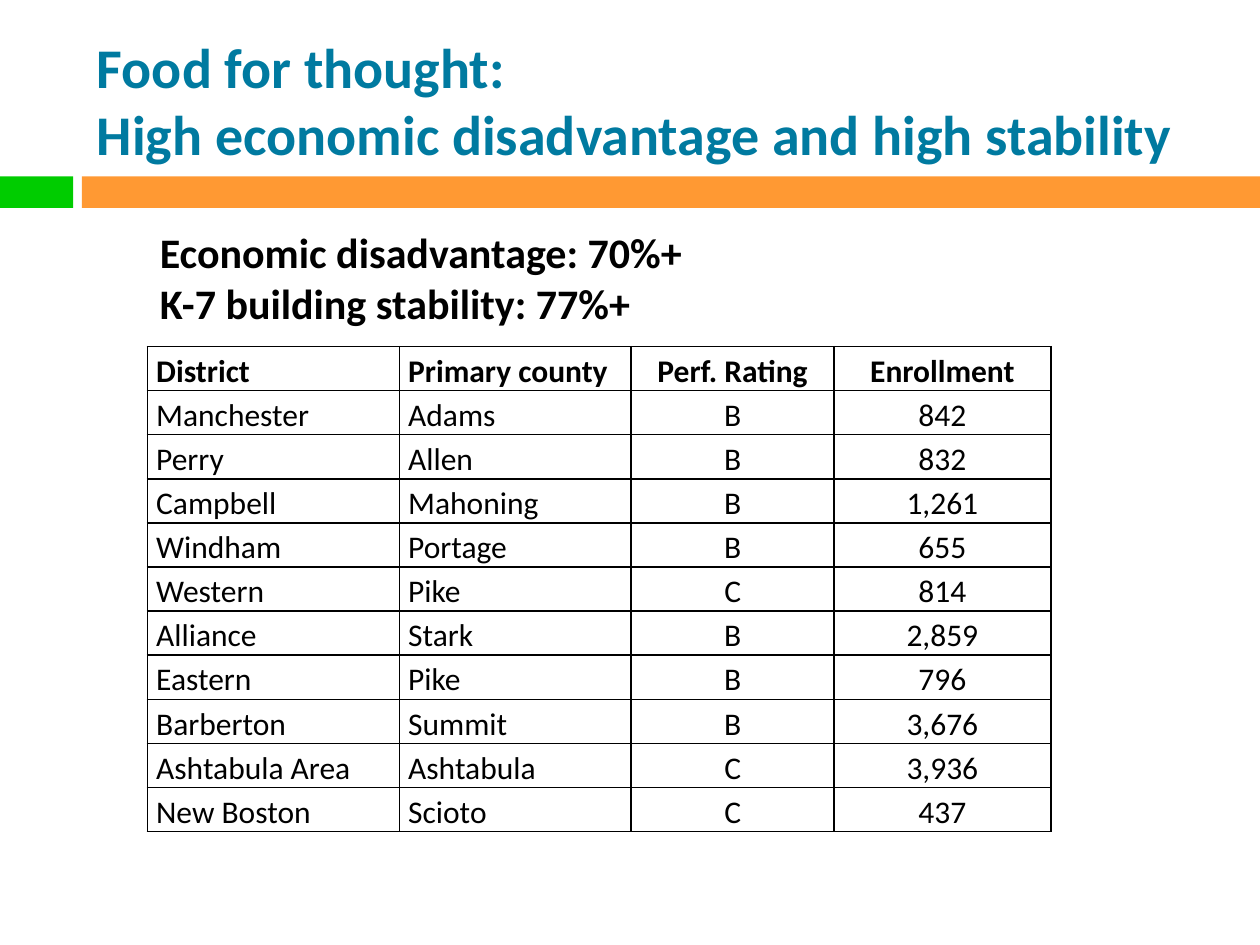
import dataclasses

import pptx
import pptx.dml.color
import pptx.enum.shapes
import pptx.enum.text
import pptx.oxml
import pptx.oxml.ns
import pptx.util

Inches = pptx.util.Inches
Pt = pptx.util.Pt
LEFT = pptx.enum.text.PP_ALIGN.LEFT
CENTER = pptx.enum.text.PP_ALIGN.CENTER
MIDDLE = pptx.enum.text.MSO_ANCHOR.MIDDLE
TOP = pptx.enum.text.MSO_ANCHOR.TOP


@dataclasses.dataclass(frozen=True)
class Theme:
    font: str = "Calibri"
    title_color: str = "007AA0"
    text_color: str = "000000"
    border_color: str = "000000"
    accent_green: str = "00CC00"
    accent_orange: str = "FF9933"
    title_size: int = 32
    criteria_size: int = 24
    table_size: int = 18


THEME = Theme()

COLUMNS = [
    ("District", 2, LEFT),
    ("Primary county", 1.84, LEFT),
    ("Perf. Rating", 1.61, CENTER),
    ("Enrollment", 1.72, CENTER),
]
DISTRICTS = [
    ("Manchester", "Adams", "B", "842"),
    ("Perry", "Allen", "B", "832"),
    ("Campbell", "Mahoning", "B", "1,261"),
    ("Windham", "Portage", "B", "655"),
    ("Western", "Pike", "C", "814"),
    ("Alliance", "Stark", "B", "2,859"),
    ("Eastern", "Pike", "B", "796"),
    ("Barberton", "Summit", "B", "3,676"),
    ("Ashtabula Area", "Ashtabula", "C", "3,936"),
    ("New Boston", "Scioto", "C", "437"),
]
ROW_HEIGHT = 0.35


def rgb(color):
    return pptx.dml.color.RGBColor.from_string(color)


def add_run(paragraph, text, size, color, bold):
    run = paragraph.add_run()
    run.text = text
    run.font.name = THEME.font
    run.font.size = Pt(size)
    run.font.color.rgb = rgb(color)
    run.font.bold = bold


def add_bar(slide, left, top, width, height, color):
    shape = slide.shapes.add_shape(
        pptx.enum.shapes.MSO_SHAPE.RECTANGLE,
        Inches(left), Inches(top), Inches(width), Inches(height),
    )
    shape.shadow.inherit = False
    shape.fill.solid()
    shape.fill.fore_color.rgb = rgb(color)
    shape.line.fill.background()


def add_heading(slide, left, top, width, height, lines, size, color, anchor):
    box = slide.shapes.add_textbox(
        Inches(left), Inches(top), Inches(width), Inches(height)
    )
    frame = box.text_frame
    frame.word_wrap = True
    frame.vertical_anchor = anchor
    paragraph = frame.paragraphs[0]
    for index, line in enumerate(lines):
        if index:
            paragraph.add_line_break()
        add_run(paragraph, line, size, color, True)


def set_borders(cell):
    properties = cell._tc.get_or_add_tcPr()
    for index, side in enumerate(("lnL", "lnR", "lnT", "lnB")):
        border = pptx.oxml.parse_xml(
            f'<a:{side} {pptx.oxml.ns.nsdecls("a")} w="{Pt(1)}"><a:solidFill>'
            f'<a:srgbClr val="{THEME.border_color}"/></a:solidFill></a:{side}>'
        )
        properties.insert(index, border)


def fill_cell(cell, text, alignment, bold):
    cell.fill.background()
    cell.margin_left = cell.margin_right = Inches(0.07)
    cell.margin_top = cell.margin_bottom = 0
    cell.vertical_anchor = MIDDLE
    paragraph = cell.text_frame.paragraphs[0]
    paragraph.alignment = alignment
    paragraph.line_spacing = 1.15
    add_run(paragraph, text, THEME.table_size, THEME.text_color, bold)
    set_borders(cell)


def add_district_table(slide, left, top):
    headers, widths, alignments = zip(*COLUMNS)
    rows = [headers, *DISTRICTS]
    table = slide.shapes.add_table(
        len(rows), len(COLUMNS), Inches(left), Inches(top),
        Inches(sum(widths)), Inches(ROW_HEIGHT * len(rows)),
    ).table
    table.first_row = False
    table.horz_banding = False
    for column, width in zip(table.columns, widths):
        column.width = Inches(width)
    for row_index, values in enumerate(rows):
        table.rows[row_index].height = Inches(ROW_HEIGHT)
        for column_index, text in enumerate(values):
            fill_cell(table.cell(row_index, column_index), text,
                      alignments[column_index], row_index == 0)


def main():
    presentation = pptx.Presentation()
    presentation.slide_width = Inches(10)
    presentation.slide_height = Inches(7.5)
    slide = presentation.slides.add_slide(presentation.slide_layouts[6])

    add_bar(slide, 0, 1.4, 0.58, 0.25, THEME.accent_green)
    add_bar(slide, 0.65, 1.4, 9.35, 0.25, THEME.accent_orange)
    add_heading(
        slide, 0.67, 0.25, 9.08, 1.08,
        ["Food for thought:", "High economic disadvantage and high stability"],
        THEME.title_size, THEME.title_color, MIDDLE,
    )
    add_district_table(slide, 1.17, 2.75)
    add_heading(
        slide, 1.17, 1.75, 4.5, 0.91,
        ["Economic disadvantage: 70%+", "K-7 building stability: 77%+"],
        THEME.criteria_size, THEME.text_color, TOP,
    )
    presentation.save("out.pptx")


if __name__ == "__main__":
    main()
